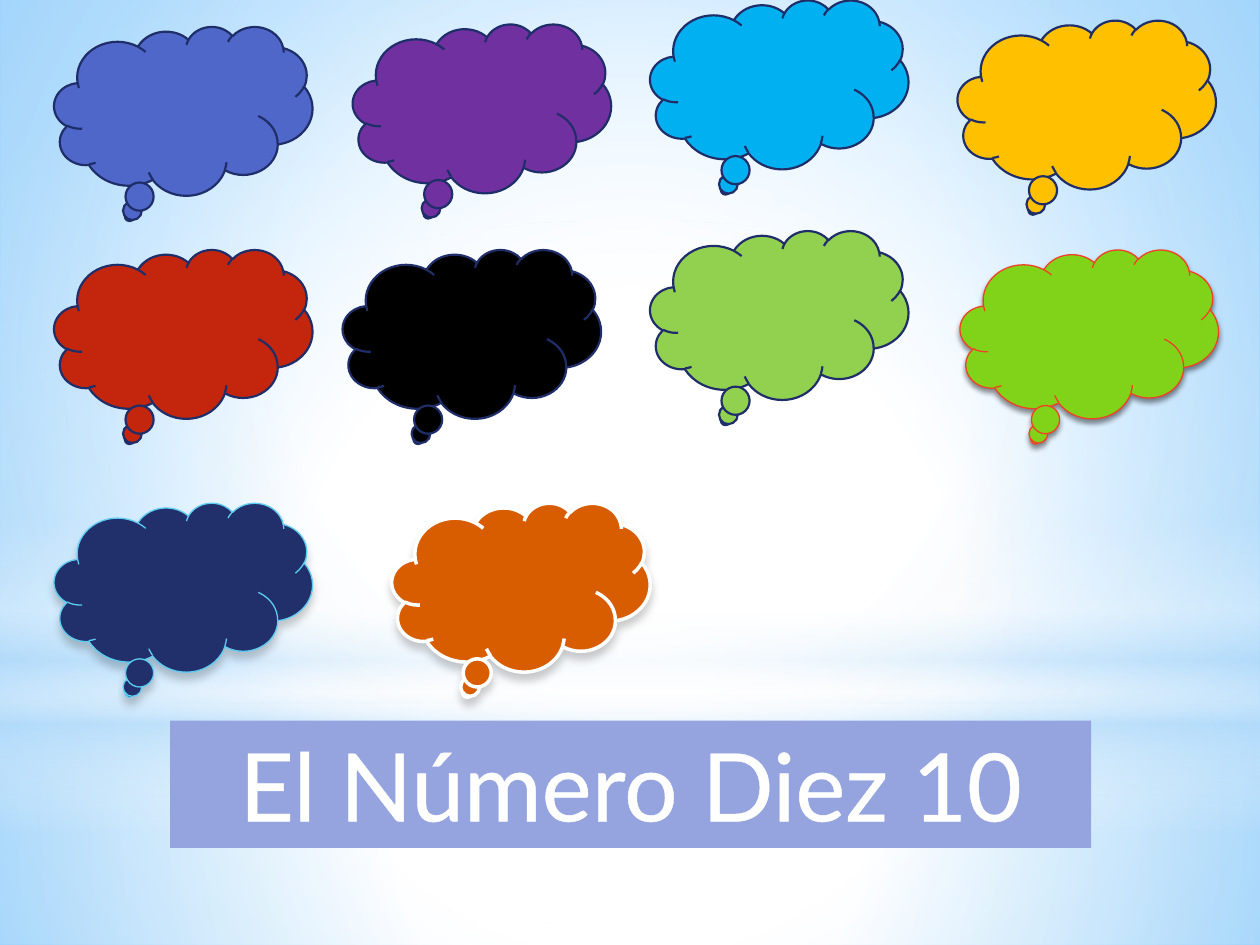
from dataclasses import dataclass
from typing import Optional

from lxml.etree import _Element
from pptx import Presentation
from pptx.dml.color import RGBColor
from pptx.enum.shapes import MSO_SHAPE
from pptx.enum.text import MSO_AUTO_SIZE, PP_ALIGN
from pptx.oxml import parse_xml
from pptx.oxml.ns import nsdecls, qn
from pptx.util import Inches, Pt


@dataclass(frozen=True)
class Theme:
    font: str = "Lato"
    size: float = 54
    stroke: float = 1.45
    white: str = "FFFFFF"
    sky: str = "63BCFF"
    haze: str = "B4DCFA"
    navy: str = "1F2E69"
    band: str = "95A4DE"


@dataclass(frozen=True)
class Stop:
    pos: int
    color: str
    alpha: int = 100


@dataclass(frozen=True)
class Wash:
    kind: MSO_SHAPE
    top: float
    height: float
    stops: tuple[Stop, ...]
    angle: Optional[int] = None


@dataclass(frozen=True)
class Shade:
    alpha: int
    blur: float
    dist: float


@dataclass(frozen=True)
class Cloud:
    left: float
    top: float
    fill: str
    line: str = Theme.navy
    width: float = 1.25
    shade: Optional[Shade] = None


T = Theme()
WIDE, HIGH = 10, 7.5
CLOUD_W, CLOUD_H = 2.05, 1.34
MID = (50, 50, 50, 50)
SOFT = Shade(20, 5, 4)
FIRM = Shade(45, 3.1, 1.8)

WASHES = (
    Wash(MSO_SHAPE.RECTANGLE, 5.58, 1.92,
         (Stop(0, T.white, 91), Stop(37, T.white, 76), Stop(100, T.haze, 79))),
    Wash(MSO_SHAPE.RECTANGLE, 0, 5.58,
         (Stop(0, T.white, 89), Stop(48, T.white, 62), Stop(100, T.haze, 79))),
    Wash(MSO_SHAPE.RECTANGLE, 4.12, 2.5,
         (Stop(0, T.white, 0), Stop(29, T.white, 30), Stop(45, T.haze, 40),
          Stop(55, T.white, 26), Stop(65, T.haze, 60), Stop(100, T.white, 0)), 90),
    Wash(MSO_SHAPE.OVAL, 1.75, 5.58, (Stop(0, T.white), Stop(56, T.white, 0))),
)

CLOUDS = (
    Cloud(0.43, 0.21, "4E67C8"),
    Cloud(2.8, 0.19, "7030A0"),
    Cloud(5.16, 0, "00B0F0"),
    Cloud(0.43, 1.98, "C3260C"),
    Cloud(2.72, 1.98, "000000"),
    Cloud(5.16, 1.83, "92D050"),
    Cloud(0.43, 3.99, "21306A", "5ECCF3", 0.75, SOFT),
    Cloud(7.62, 1.98, "81D31A", "F14124", 0.75, FIRM),
    Cloud(7.6, 0.16, "FFC000"),
    Cloud(3.11, 3.99, "D85C00", T.white, 2, SOFT),
)


def rgb(code: str) -> RGBColor:
    return RGBColor.from_string(code)


def tint(color: str, alpha: int) -> str:
    return f'<a:srgbClr val="{color}"><a:alpha val="{alpha * 1000}"/></a:srgbClr>'


def blend(parent: _Element, stops: tuple[Stop, ...], angle: Optional[int] = None,
          focus: tuple[int, ...] = MID) -> None:
    """Swap the solid fill of parent for a gradient."""
    marks = "".join(f'<a:gs pos="{s.pos * 1000}">{tint(s.color, s.alpha)}</a:gs>'
                    for s in stops)
    if angle is None:
        sides = " ".join(f'{k}="{v * 1000}"' for k, v in zip("ltrb", focus))
        way = f'<a:path path="circle"><a:fillToRect {sides}/></a:path>'
    else:
        way = f'<a:lin ang="{angle * 60000}" scaled="0"/>'
    grad = parse_xml(f'<a:gradFill {nsdecls("a")} rotWithShape="1">'
                     f'<a:gsLst>{marks}</a:gsLst>{way}</a:gradFill>')
    parent.replace(parent.find(qn("a:solidFill")), grad)


def draw_wash(slide, wash: Wash) -> None:
    shape = slide.shapes.add_shape(wash.kind, 0, Inches(wash.top),
                                   Inches(WIDE), Inches(wash.height))
    shape.shadow.inherit = False
    shape.line.fill.background()
    shape.fill.solid()
    blend(shape._element.spPr, wash.stops, wash.angle)


def draw_cloud(slide, cloud: Cloud) -> None:
    shape = slide.shapes.add_shape(MSO_SHAPE.CLOUD_CALLOUT, Inches(cloud.left),
                                   Inches(cloud.top), Inches(CLOUD_W), Inches(CLOUD_H))
    shape.fill.solid()
    shape.fill.fore_color.rgb = rgb(cloud.fill)
    shape.line.color.rgb = rgb(cloud.line)
    shape.line.width = Pt(cloud.width)
    shape.shadow.inherit = False
    if cloud.shade:
        shade = cloud.shade
        shape._element.spPr.find(qn("a:effectLst")).append(parse_xml(
            f'<a:outerShdw {nsdecls("a")} blurRad="{Pt(shade.blur)}" '
            f'dist="{Pt(shade.dist)}" dir="5400000" rotWithShape="0">'
            f'{tint("000000", shade.alpha)}</a:outerShdw>'))


def draw_title(slide, text: str) -> None:
    box = slide.shapes.add_textbox(Inches(1.35), Inches(5.72), Inches(7.31), Inches(1.01))
    box.fill.solid()
    box.fill.fore_color.rgb = rgb(T.band)
    frame = box.text_frame
    frame.word_wrap = False
    frame.auto_size = MSO_AUTO_SIZE.SHAPE_TO_FIT_TEXT
    para = frame.paragraphs[0]
    para.text = text
    para.alignment = PP_ALIGN.CENTER
    para.font.name = T.font
    para.font.size = Pt(T.size)
    para.font.color.rgb = rgb(T.white)
    # Letter outline
    para._p.pPr.find(qn("a:defRPr")).insert(0, parse_xml(
        f'<a:ln {nsdecls("a")} w="{Pt(T.stroke)}"><a:solidFill>'
        f'{tint(T.white, 100)}</a:solidFill></a:ln>'))


def main() -> None:
    deck = Presentation()
    deck.slide_width, deck.slide_height = Inches(WIDE), Inches(HIGH)
    slide = deck.slides.add_slide(deck.slide_layouts[6])

    # Sky
    slide.background.fill.solid()
    blend(slide._element.cSld.bg.bgPr,
          (Stop(0, T.white), Stop(42, T.white), Stop(100, T.sky)),
          focus=(24, 44, 24, 12))
    for wash in WASHES:
        draw_wash(slide, wash)

    # Ten clouds to count
    for cloud in CLOUDS:
        draw_cloud(slide, cloud)

    # Title band
    draw_title(slide, "El Número Diez 10")
    deck.save("out.pptx")


if __name__ == "__main__":
    main()
